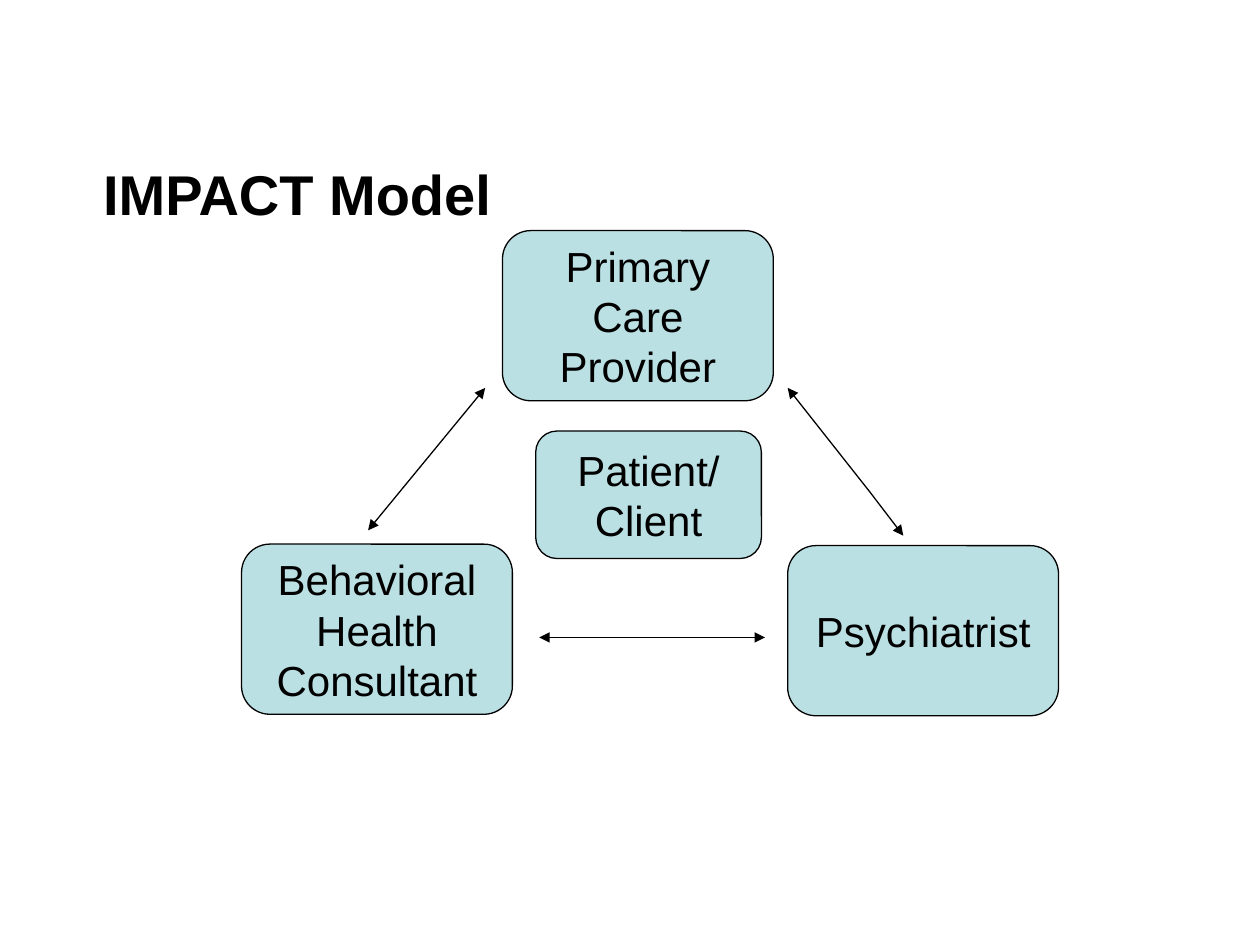
from lxml.etree import SubElement
from pptx import Presentation
from pptx.dml.color import RGBColor as Color
from pptx.enum.shapes import MSO_CONNECTOR as Connector, MSO_SHAPE as Shape
from pptx.enum.text import MSO_ANCHOR as Anchor, PP_ALIGN as Align
from pptx.oxml.ns import qn
from pptx.util import Cm, Pt

# Content: lengths in centimetres
TITLE = "IMPACT Model"
TITLE_AREA = (1.9, 2.97, 22.23, 2.34)
ROLE_SIZE = (5.46, 3.43)
PATIENT_SIZE = (4.55, 2.57)
BOXES = [  # lines of text, left and top, size
    (("Primary", "Care", "Provider"), (10.13, 4.65), ROLE_SIZE),
    (("Psychiatrist",), (15.88, 11.0), ROLE_SIZE),
    (("Behavioral", "Health", "Consultant"), (4.87, 10.97), ROLE_SIZE),
    (("Patient/", "Client"), (10.8, 8.69), PATIENT_SIZE),
]
STRAIGHT_ARROWS = [
    ((10.87, 12.85), (15.42, 12.85)),
    ((7.42, 10.69), (9.78, 7.82)),
]
BENT_ARROW = [(18.21, 10.8), (17.53, 9.91), (15.88, 7.82)]

THEME = {
    "fill": Color.from_string("BBE0E3"),
    "line": Color.from_string("000000"),
    "line_width": Pt(0.75),
    "title": {"name": "Arial", "size": Pt(32), "bold": True},
    "label": {"name": "Arial", "size": Pt(24), "bold": False},
    "text": Color.from_string("000000"),
}


def lengths(values):
    return [Cm(value) for value in values]


def write(para, text, style):
    span = para.add_run()
    span.text = text
    for name, value in THEME[style].items():
        setattr(span.font, name, value)
    span.font.color.rgb = THEME["text"]


def draw_line(shape):
    shape.line.color.rgb = THEME["line"]
    shape.line.width = THEME["line_width"]


def add_arrowheads(shape):
    draw_line(shape)
    outline = shape.line._get_or_add_ln()
    for end in ("a:headEnd", "a:tailEnd"):
        SubElement(outline, qn(end), type="triangle")


def add_title(page):
    frame = page.shapes.add_textbox(*lengths(TITLE_AREA)).text_frame
    settings = {"word_wrap": True, "vertical_anchor": Anchor.TOP,
                "margin_left": Cm(0.18), "margin_top": Cm(0.24)}
    for name, value in settings.items():
        setattr(frame, name, value)
    write(frame.paragraphs[0], TITLE, "title")


def add_box(page, lines, place, size):
    box = page.shapes.add_shape(Shape.ROUNDED_RECTANGLE, *lengths(place + size))
    box.shadow.inherit = False
    box.fill.solid()
    box.fill.fore_color.rgb = THEME["fill"]
    draw_line(box)
    frame = box.text_frame
    frame.word_wrap = False
    frame.vertical_anchor = Anchor.MIDDLE
    for number, line in enumerate(lines):
        para = frame.add_paragraph() if number else frame.paragraphs[0]
        para.alignment = Align.CENTER
        write(para, line, "label")


def add_straight_arrow(page, start, end):
    arrow = page.shapes.add_connector(Connector.STRAIGHT, *lengths(start + end))
    add_arrowheads(arrow)
    SubElement(arrow._element.spPr, qn("a:effectLst"))


def add_bent_arrow(page, points):
    start, *rest = [lengths(point) for point in points]
    builder = page.shapes.build_freeform(*start)
    builder.add_line_segments(rest, close=False)
    arrow = builder.convert_to_shape()
    arrow.shadow.inherit = False
    arrow.fill.background()
    add_arrowheads(arrow)


def main():
    deck = Presentation()
    deck.slide_width, deck.slide_height = Cm(25.4), Cm(19.05)
    page = deck.slides.add_slide(deck.slide_layouts[6])

    # Title, then the roles and the links between them
    add_title(page)
    for box in BOXES:
        add_box(page, *box)
    for arrow in STRAIGHT_ARROWS:
        add_straight_arrow(page, *arrow)
    add_bent_arrow(page, BENT_ARROW)

    deck.save("out.pptx")


if __name__ == "__main__":
    main()
